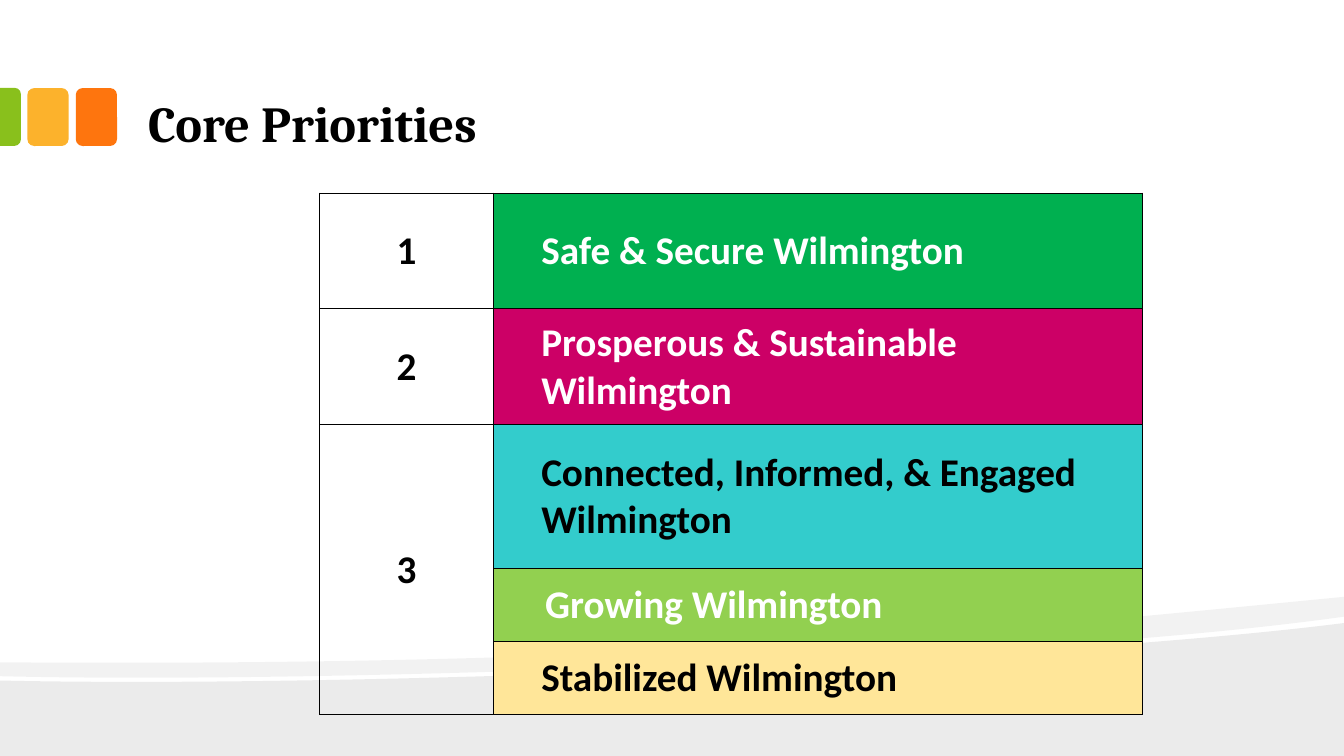
from lxml import etree
from pptx import Presentation
from pptx.dml.color import RGBColor
from pptx.enum.shapes import MSO_SHAPE
from pptx.enum.text import MSO_ANCHOR, PP_ALIGN
from pptx.oxml.ns import qn
from pptx.util import Cm, Pt

ROUNDED = MSO_SHAPE.ROUNDED_RECTANGLE
ROUNDED_TOP = MSO_SHAPE.ROUND_2_SAME_RECTANGLE
MIDDLE, BOTTOM = MSO_ANCHOR.MIDDLE, MSO_ANCHOR.BOTTOM
LEFT, CENTER = PP_ALIGN.LEFT, PP_ALIGN.CENTER

COLORS = {
    "black": "000000", "white": "FFFFFF",
    "tab_green": "89C01C", "tab_yellow": "FCB22C", "tab_orange": "FE750E",
    "safe": "00B050", "prosperous": "CC0066", "connected": "33CCCC",
    "growing": "92D050", "stabilized": "FFE699",
}

# Content: rank (None continues the rank above), priority, fill, text, indent, height
TITLE = "Core Priorities"
PRIORITIES = [
    ("1", "Safe & Secure Wilmington", "safe", "white", 1.2, 2.92),
    ("2", "Prosperous & Sustainable Wilmington", "prosperous", "white", 1.2, 2.92),
    ("3", "Connected, Informed, & Engaged Wilmington", "connected", "black", 1.2, 3.61),
    (None, "Growing Wilmington", "growing", "white", 1.3, 1.84),
    (None, "Stabilized Wilmington", "stabilized", "black", 1.2, 1.84),
]
COLUMN_WIDTHS = (4.39, 16.35)
TABLE_LEFT, TABLE_TOP = 8.05, 4.86
SLIDE_W, SLIDE_H = 33.87, 19.05

# Waves in cm: start, then steps of one point (line) or three (curve)
HILL = [
    [(33.87, 15.7)],
    [(33.87, 19.05)],
    [(0, 19.05)],
    [(0, 17.15)],
    [(8.94, 17.35), (26.47, 16.64), (33.87, 15.7)],
]
BAND = [
    [(33.87, 15.04)],
    [(33.87, 15.54)],
    [(31.88, 15.82), (29.18, 16.08), (26.14, 16.28)],
    [(17.73, 16.84), (6.55, 17.2), (0, 17.04)],
    [(0, 16.69)],
    [(16.56, 16.81), (24.66, 15.93), (33.87, 15.04)],
]


def rgb(name):
    return RGBColor.from_string(COLORS[name])


def paint(shape, color):
    shape.shadow.inherit = False
    shape.fill.solid()
    shape.fill.fore_color.rgb = rgb(color)
    shape.line.fill.background()


def add_wave(outline, opacity):
    ends = [(Cm(step[-1][0]), Cm(step[-1][1])) for step in outline]
    builder = slide.shapes.build_freeform(*ends[0])
    builder.add_line_segments(ends[1:], close=True)
    wave = builder.convert_to_shape()
    paint(wave, "black")
    properties = wave._element.spPr
    color = next(properties.iter(qn("a:srgbClr")))
    etree.SubElement(color, qn("a:alpha"), val=str(opacity * 1000))
    # Bend the steps that carry control points
    segments = list(properties.iter(qn("a:lnTo")))
    for segment, step in zip(segments, outline[1:]):
        if len(step) == 3:
            curve = etree.Element(qn("a:cubicBezTo"))
            for x, y in step:
                etree.SubElement(curve, qn("a:pt"), x=str(Cm(x) - wave.left),
                                 y=str(Cm(y) - wave.top))
            segment.getparent().replace(segment, curve)


def add_borders(cell):
    properties = cell._tc.get_or_add_tcPr()
    for side in ("lnL", "lnR", "lnT", "lnB"):
        line = etree.SubElement(properties, qn(f"a:{side}"), w=str(Pt(0.5)))
        fill = etree.SubElement(line, qn("a:solidFill"))
        etree.SubElement(fill, qn("a:srgbClr"), val=COLORS["black"])


def fill_cell(cell, text, color, indent, align, fill=None):
    add_borders(cell)
    if fill:
        cell.fill.solid()
        cell.fill.fore_color.rgb = rgb(fill)
    else:
        cell.fill.background()
    cell.vertical_anchor = MIDDLE
    cell.margin_left, cell.margin_right = Cm(indent), Cm(0.03)
    cell.margin_top, cell.margin_bottom = Cm(0.02), 0
    if text:
        cell.text = text
    paragraph = cell.text_frame.paragraphs[0]
    paragraph.alignment = align
    font = paragraph.font
    font.name, font.size, font.bold = "Calibri", Pt(28), True
    font.color.rgb = rgb(color)


prs = Presentation()
prs.slide_width, prs.slide_height = Cm(SLIDE_W), Cm(SLIDE_H)
slide = prs.slides.add_slide(prs.slide_layouts[5])

# Waves at the foot
add_wave(HILL, 8)
add_wave(BAND, 5)

# Coloured tabs beside the title
for index, color in enumerate(("tab_yellow", "tab_orange")):
    tab = slide.shapes.add_shape(
        ROUNDED, Cm(0.69 + 1.22 * index), Cm(2.22), Cm(1.04), Cm(1.46))
    paint(tab, color)
edge_tab = slide.shapes.add_shape(ROUNDED_TOP, Cm(-0.47), Cm(2.68), Cm(1.46), Cm(0.53))
edge_tab.rotation = 90
edge_tab.adjustments[0] = 0.29
paint(edge_tab, "tab_green")

# Title
title = slide.shapes.title
title.left, title.top, title.width, title.height = Cm(3.39), Cm(0.41), Cm(27.08), Cm(3.61)
frame = title.text_frame
frame.text = TITLE
frame.word_wrap = True
frame.vertical_anchor = BOTTOM
frame.margin_left = frame.margin_right = Cm(0.34)
frame.margin_top = frame.margin_bottom = Cm(0.17)
heading = frame.paragraphs[0]
heading.alignment = LEFT
heading.font.name, heading.font.size, heading.font.bold = "Cambria", Pt(36), True
heading.font.color.rgb = rgb("black")

# Priorities table
table = slide.shapes.add_table(
    len(PRIORITIES), len(COLUMN_WIDTHS), Cm(TABLE_LEFT), Cm(TABLE_TOP),
    Cm(sum(COLUMN_WIDTHS)), Cm(sum(row[-1] for row in PRIORITIES))).table
table.first_row = table.horz_banding = False
for column, width in zip(table.columns, COLUMN_WIDTHS):
    column.width = Cm(width)
for index, (rank, priority, fill, color, indent, height) in enumerate(PRIORITIES):
    table.rows[index].height = Cm(height)
    fill_cell(table.cell(index, 0), rank, "black", 0.03, CENTER)
    fill_cell(table.cell(index, 1), priority, color, indent, LEFT, fill)
shared_rank = [row[0] for row in PRIORITIES].index("3")
table.cell(shared_rank, 0).merge(table.cell(len(PRIORITIES) - 1, 0))

prs.save("out.pptx")
